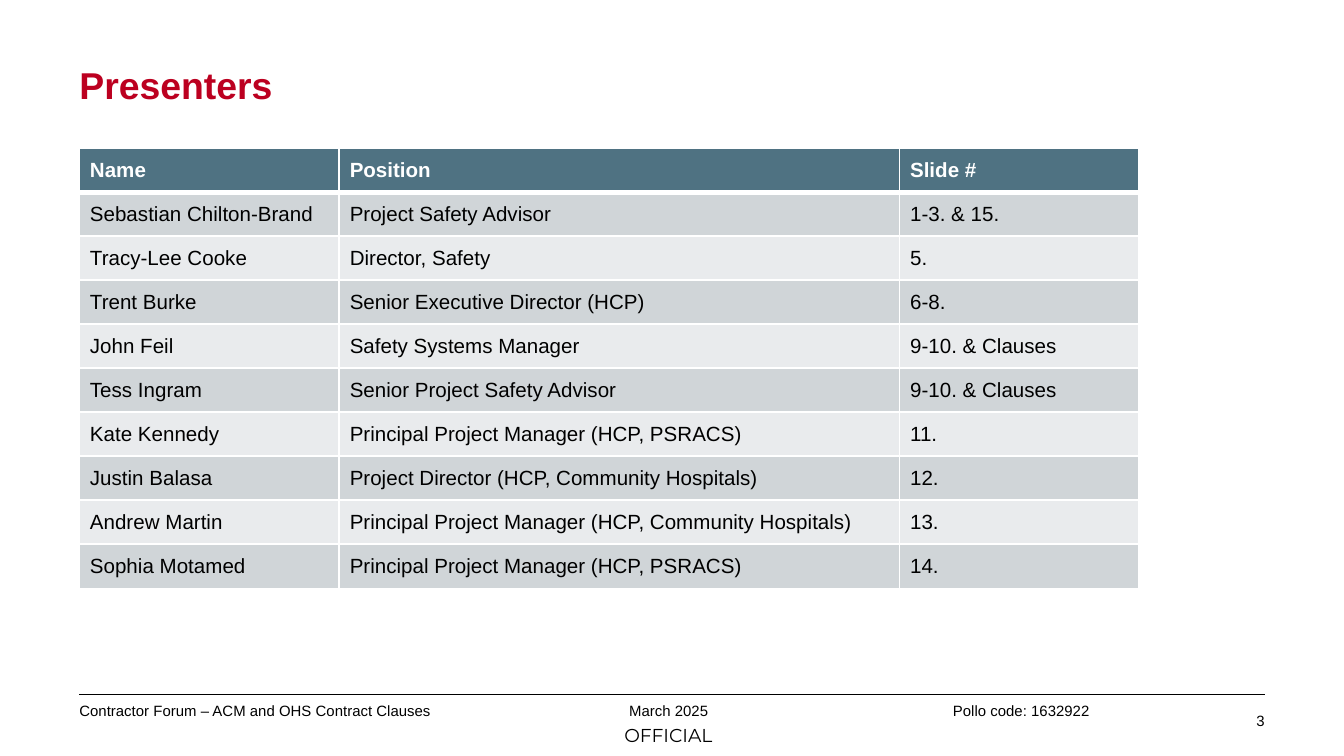
from lxml.etree import SubElement
from pptx import Presentation
from pptx.dml.color import RGBColor
from pptx.enum.shapes import MSO_CONNECTOR
from pptx.enum.text import MSO_ANCHOR, PP_ALIGN
from pptx.oxml import parse_xml
from pptx.oxml.ns import nsdecls, qn
from pptx.util import Cm, Pt

COLORS = {
    "title": "BC0020",
    "header": "4F7282",
    "odd": "D0D5D8",
    "even": "E9EBED",
    "white": "FFFFFF",
    "black": "000000",
}
PRESENTERS = [
    ("Name", "Position", "Slide #"),
    ("Sebastian Chilton-Brand", "Project Safety Advisor", "1-3. & 15."),
    ("Tracy-Lee Cooke", "Director, Safety", "5."),
    ("Trent Burke", "Senior Executive Director (HCP)", "6-8."),
    ("John Feil", "Safety Systems Manager", "9-10. & Clauses"),
    ("Tess Ingram", "Senior Project Safety Advisor", "9-10. & Clauses"),
    ("Kate Kennedy", "Principal Project Manager (HCP, PSRACS)", "11."),
    ("Justin Balasa", "Project Director (HCP, Community Hospitals)", "12."),
    ("Andrew Martin", "Principal Project Manager (HCP, Community Hospitals)", "13."),
    ("Sophia Motamed", "Principal Project Manager (HCP, PSRACS)", "14."),
]
COLUMN_SHARES = (4.91, 10.59, 4.53)


def color(name):
    """Return the named palette colour."""
    return RGBColor.from_string(COLORS[name])


def style_text(frame, size, tint="black", bold=False, face="Arial", align=PP_ALIGN.LEFT):
    """Format every run of a text frame."""
    for paragraph in frame.paragraphs:
        paragraph.alignment = align
        for run in paragraph.runs:
            run.font.size = Pt(size)
            run.font.name = face
            run.font.bold = bold
            run.font.color.rgb = color(tint)


def clear_margins(frame):
    """Remove the insets of a text frame."""
    frame.margin_left = frame.margin_right = frame.margin_top = frame.margin_bottom = 0


def add_label(slide, box, text, size, **style):
    """Add a text box without insets and return its text frame."""
    frame = slide.shapes.add_textbox(*map(Cm, box)).text_frame
    frame.word_wrap = True
    clear_margins(frame)
    frame.text = text
    style_text(frame, size, **style)
    return frame


def add_borders(cell, is_header):
    """Draw white borders, with a heavier rule under the header."""
    properties = cell._tc.get_or_add_tcPr()
    for position, side in enumerate(("lnL", "lnR", "lnT", "lnB")):
        width = 3 if is_header and side == "lnB" else 1
        border = parse_xml(
            f'<a:{side} {nsdecls("a")} w="{Pt(width)}"><a:solidFill>'
            f'<a:srgbClr val="{COLORS["white"]}"/></a:solidFill></a:{side}>'
        )
        properties.insert(position, border)


def add_title(slide, box, text):
    """Place the slide title in its placeholder."""
    title = slide.shapes.title
    title.left, title.top, title.width, title.height = map(Cm, box)
    frame = title.text_frame
    frame.text = text
    frame.vertical_anchor = MSO_ANCHOR.MIDDLE
    clear_margins(frame)
    style_text(frame, 20, "title", bold=True)


def add_presenters(slide, box, rows):
    """Fill the box with the banded table of presenters."""
    table = slide.shapes.add_table(len(rows), len(rows[0]), *map(Cm, box)).table
    for column, share in zip(table.columns, COLUMN_SHARES):
        column.width = Cm(box[2] * share / sum(COLUMN_SHARES))
    for row_index, row in enumerate(rows):
        is_header = row_index == 0
        band = "header" if is_header else ("even", "odd")[row_index % 2]
        table.rows[row_index].height = Cm(box[3] / len(rows))
        for column_index, text in enumerate(row):
            cell = table.cell(row_index, column_index)
            cell.text = text
            cell.vertical_anchor = MSO_ANCHOR.MIDDLE
            cell.margin_left = cell.margin_right = Cm(0.2)
            cell.margin_top = cell.margin_bottom = Cm(0.19)
            cell.fill.solid()
            cell.fill.fore_color.rgb = color(band)
            add_borders(cell, is_header)
            style_text(cell.text_frame, 11, "white" if is_header else "black", is_header)


def add_footer(slide, box, notes, page, marking):
    """Place the rule, tabbed notes, page number and marking in the box."""
    left, top, width, height = box
    rule = slide.shapes.add_connector(
        MSO_CONNECTOR.STRAIGHT, Cm(left), Cm(top), Cm(left + width), Cm(top)
    )
    rule.line.color.rgb = color("black")
    rule.line.width = Pt(0.25)
    SubElement(rule._element.spPr, qn("a:effectLst"))

    add_label(slide, (left + width / 2 - 0.9, top + 0.56, 2.2, 0.43),
              marking, 10, face="Montserrat")
    add_label(slide, (left + width - 2.9, top + 0.33, 2.9, 0.48),
              page, 8, align=PP_ALIGN.RIGHT)
    forum = add_label(slide, (left, top + 0.13, width, 0.48), "\t".join(notes), 8)
    tabs = SubElement(forum.paragraphs[0]._p.get_or_add_pPr(), qn("a:tabLst"))
    for stop in (10.39, 16.51):
        SubElement(tabs, qn("a:tab"), pos=str(Cm(stop)), algn="l")


def main():
    """Build and save the presenters slide."""
    deck = Presentation()
    deck.slide_width, deck.slide_height = Cm(25.4), Cm(14.29)
    slide = deck.slides.add_slide(deck.slide_layouts[5])
    add_title(slide, (1.5, 0.71, 22.4, 1.78), "Presenters")
    add_presenters(slide, (1.5, 2.8, 20.03, 8.32), PRESENTERS)
    notes = (
        "Contractor Forum – ACM and OHS Contract Clauses",
        "March 2025",
        "Pollo code: 1632922",
    )
    add_footer(slide, (1.5, 13.13, 22.4, 1), notes, "3", "OFFICIAL")
    deck.save("out.pptx")


if __name__ == "__main__":
    main()
